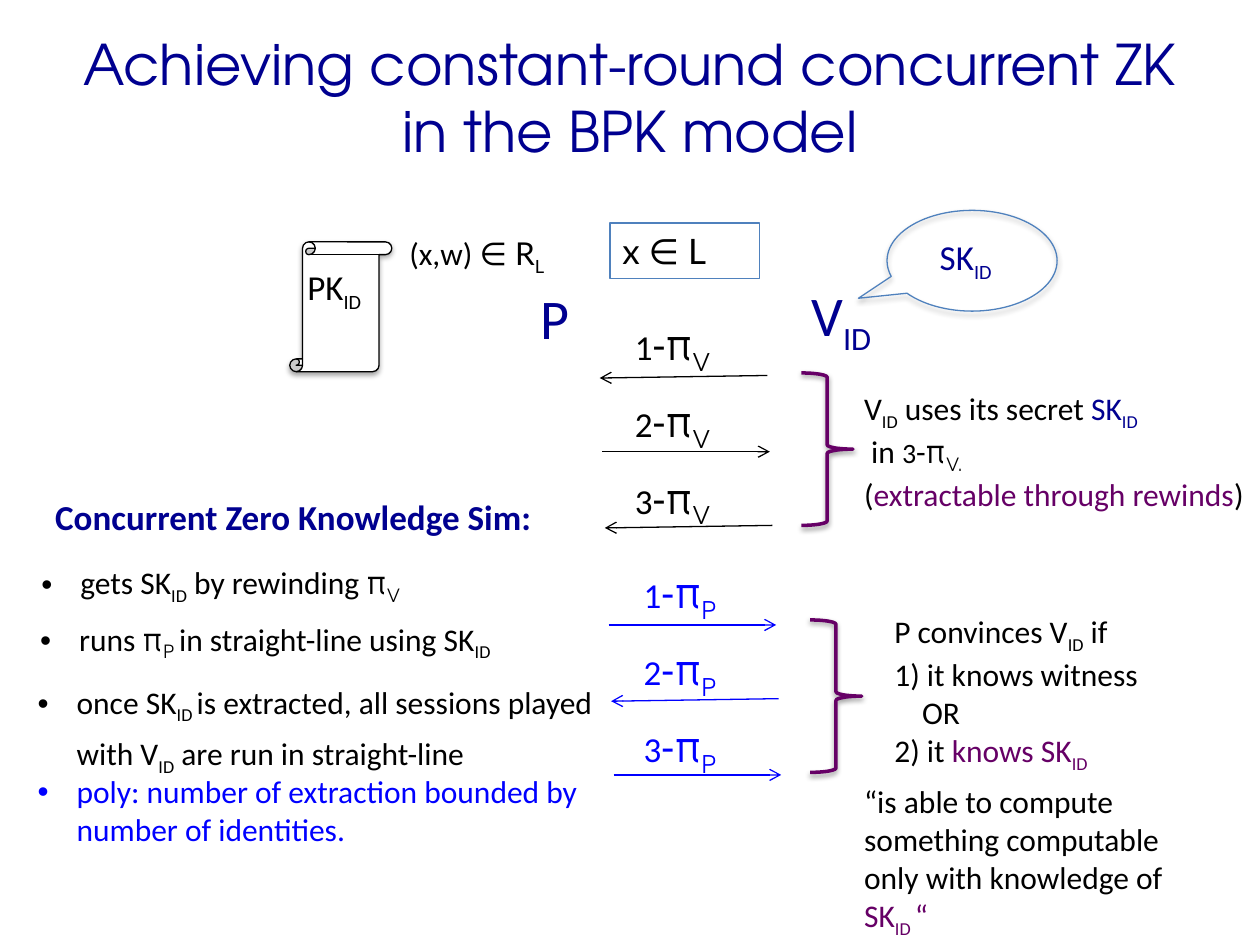
from dataclasses import dataclass

from lxml.etree import SubElement
from pptx import Presentation
from pptx.dml.color import RGBColor
from pptx.enum.shapes import MSO_CONNECTOR, MSO_SHAPE
from pptx.enum.text import MSO_ANCHOR, MSO_AUTO_SIZE, PP_ALIGN
from pptx.oxml.ns import qn
from pptx.util import Inches, Pt


@dataclass(frozen=True)
class Theme:
    black: str = "000000"
    white: str = "FFFFFF"
    navy: str = "000090"
    blue: str = "0000FF"
    purple: str = "660066"
    outline: str = "4F81BD"
    body: str = "Calibri"
    math: str = "TeX Gyre Adventor"
    symbol: str = "Lato"
    title: int = 32
    label: int = 20
    text: int = 18
    small: int = 16
    dash: int = 24
    thin: float = 0.75
    thick: float = 2


T = Theme()
NAVY = {"color": T.navy}
PURPLE = {"color": T.purple}
MATH = {"name": T.math}


def sub(text, **fmt):
    """A subscript run."""
    return text, {"sub": True, **fmt}


ID = sub("ID")


def write(tf, lines, **base):
    """Fill a text frame; a line is a list of strings and (text, format) runs."""
    for i, line in enumerate(lines):
        p = tf.paragraphs[0] if i == 0 else tf.add_paragraph()
        for run in line:
            text, own = (run, {}) if isinstance(run, str) else run
            fmt = {"name": T.body, "size": T.text, "color": T.black, **base, **own}
            r = p.add_run()
            r.text = text
            r.font.color.rgb = RGBColor.from_string(fmt.pop("color"))
            if fmt.pop("sub", False):
                r.font._element.set("baseline", "-25000")
            fmt["size"] = Pt(fmt["size"])
            for key, value in fmt.items():
                setattr(r.font, key, value)


def add_text(s, box, lines, wrap=True, **base):
    tf = s.shapes.add_textbox(*map(Inches, box)).text_frame
    tf.word_wrap = wrap
    tf.auto_size = MSO_AUTO_SIZE.SHAPE_TO_FIT_TEXT
    write(tf, lines, **base)
    return tf


def add_shadow(sp, alpha, distance):
    effects = sp._element.spPr.find(qn("a:effectLst"))
    shadow = SubElement(effects, qn("a:outerShdw"), blurRad=str(Pt(3.1)),
                        dist=str(Pt(distance)), dir="5400000", rotWithShape="0")
    color = SubElement(shadow, qn("a:srgbClr"), val=T.black)
    SubElement(color, qn("a:alpha"), val=str(alpha * 1000))


def add_outline(s, kind, box, color, width=T.thin, fill=None):
    sp = s.shapes.add_shape(kind, *map(Inches, box))
    sp.shadow.inherit = False
    if fill:
        sp.fill.solid()
        sp.fill.fore_color.rgb = RGBColor.from_string(fill)
    else:
        sp.fill.background()
    sp.line.color.rgb = RGBColor.from_string(color)
    sp.line.width = Pt(width)
    return sp


def add_arrow(s, start, end, color):
    c = s.shapes.add_connector(MSO_CONNECTOR.STRAIGHT, *map(Inches, start + end))
    c.line.color.rgb = RGBColor.from_string(color)
    c.line.width = Pt(T.thin)
    SubElement(c.line._get_or_add_ln(), qn("a:tailEnd"), type="arrow")
    SubElement(c._element.spPr, qn("a:effectLst"))


def add_title(s, box):
    tf = add_text(s, box, [["Achieving constant-round concurrent ZK in the BPK model"]],
                  name=T.math, size=T.title, color=T.navy)
    tf.auto_size = MSO_AUTO_SIZE.NONE
    tf.vertical_anchor = MSO_ANCHOR.MIDDLE
    tf.paragraphs[0].alignment = PP_ALIGN.CENTER


def add_parties(s, x, y):
    """Prover, verifier, statement and keys."""
    big = {"size": T.title, "color": T.navy}
    add_text(s, (x + 1.89, y + 0.53, 0.69, 0.64), [["P"]], **big)
    add_text(s, (x + 4.04, y + 0.51, 1.24, 0.64), [["V", ID]], **big)
    add_text(s, (x + 0.85, y + 0.14, 1.39, 0.4),
             [["(x,w) ", ("∈ R", {"name": T.symbol}), sub("L", name=T.symbol)]], wrap=False)

    statement = add_outline(s, MSO_SHAPE.RECTANGLE, (x + 2.54, y + 0.1, 1.19, 0.44), T.outline)
    write(statement.text_frame, [["x ∈ L"]], name=T.symbol, size=T.label)
    statement.text_frame.paragraphs[0].alignment = PP_ALIGN.LEFT

    add_text(s, (x + 5.06, y + 0.15, 0.71, 0.44), [["SK", ID]], size=T.label, color=T.navy)
    bubble = add_outline(s, MSO_SHAPE.OVAL_CALLOUT, (x + 4.74, y, 1.35, 0.8), T.outline)
    bubble.adjustments[0], bubble.adjustments[1] = -0.668, 0.372
    scroll = add_outline(s, MSO_SHAPE.VERTICAL_SCROLL, (x, y + 0.25, 0.81, 1.03),
                         T.black, fill=T.white)
    for sp in (bubble, scroll):
        add_shadow(sp, 35, 1.8)
    add_text(s, (x + 0.04, y + 0.39, 0.81, 0.44), [["PK", ID]], size=T.label)


def add_protocol(s, x, y, owner, directions, color):
    """Three numbered messages; a direction is '>' or '<'."""
    for i, direction in enumerate(directions):
        left, line_y = x + 0.02 * i, y + 0.51 + 0.595 * i
        right = left + 1.33
        if direction == ">":
            add_arrow(s, (left, line_y), (right, line_y), color)
        else:
            add_arrow(s, (right, line_y - 0.01), (left, line_y + 0.01), color)
        add_text(s, (x + 0.18, y + 0.61 * i, 0.86, 0.5),
                 [[(str(i + 1), {"size": T.label}), "-", ("π", MATH), sub(owner, **MATH)]],
                 wrap=False, size=T.dash, color=color)


def add_claim(s, x, y, note_box, lines):
    """A brace with its explanation; the note is placed relative to the brace."""
    brace = add_outline(s, MSO_SHAPE.RIGHT_BRACE, (x, y, 0.41, 1.21), T.purple, T.thick)
    add_shadow(brace, 38, 1.6)
    dx, dy, w, h = note_box
    return add_text(s, (x + dx, y + dy, w, h), lines)


def add_simulator(s, x, y):
    """Heading and bullets on the simulator."""
    add_text(s, (x + 0.14, y, 4.07, 0.44), [["Concurrent Zero Knowledge Sim:"]],
             size=T.label, bold=True, color=T.navy)
    bullets = [
        (0.03, 0.47, 3.16, 0.45, False, 1.2, T.black,
         ["gets SK", ID, " by rewinding ", ("π", MATH), sub("V", **MATH)]),
        (0.02, 0.92, 3.9, 0.45, False, 1.2, T.black,
         ["runs ", ("π", MATH), sub("P ", **MATH), "in straight-line using SK", ID]),
        (0, 1.42, 4.65, 0.82, True, 1.2, T.black,
         ["once SK", sub("ID "), "is extracted, all sessions played with V", ID,
          " are run in straight-line"]),
        (0, 2.2, 4.5, 0.71, True, 1.0, T.blue,
         ["poly: number of extraction bounded by number of identities."]),
    ]
    for dx, dy, w, h, wrap, spacing, color, line in bullets:
        tf = add_text(s, (x + dx, y + dy, w, h), [line], wrap=wrap, color=color)
        p = tf.paragraphs[0]
        p.line_spacing = spacing
        pPr = p._p.get_or_add_pPr()
        pPr.set("marL", str(Inches(0.31)))
        pPr.set("indent", str(-Inches(0.31)))
        SubElement(pPr, qn("a:buFont"), typeface="Arial")
        SubElement(pPr, qn("a:buChar"), char="•")


def main():
    prs = Presentation()
    prs.slide_width, prs.slide_height = Inches(10), Inches(7.5)
    s = prs.slides.add_slide(prs.slide_layouts[6])

    add_title(s, (0.5, 0.14, 9, 1.25))
    add_parties(s, 2.3, 1.67)

    # Verifier's proof
    add_protocol(s, 4.76, 2.48, "V", "<><", T.black)
    add_claim(s, 6.36, 2.96, (0.4, 0.08, 3.24, 1.31), [
        ["V", ID, " uses its secret ", ("SK", NAVY), sub("ID", **NAVY)],
        [" in ", ("3", {"size": T.small}), "-", ("π", MATH), sub("V.", **MATH)],
        ["(", ("extractable through rewinds", PURPLE), ")"],
    ])

    # Prover's proof
    add_protocol(s, 4.83, 4.45, "P", "><>", T.blue)
    tf = add_claim(s, 6.43, 4.92, (0.57, -0.11, 2.34, 1.31), [
        ["P convinces V", ID, " if"],
        ["1) it knows witness"],
        ["OR"],
        ["2) it ", ("knows SK", PURPLE), sub("ID", **PURPLE)],
    ])
    tf.paragraphs[2]._p.get_or_add_pPr().set("marL", str(Inches(0.22)))
    add_text(s, (6.76, 6.16, 2.74, 1.31), [
        ["“is able to compute something computable only with knowledge of ",
         ("SK", PURPLE), sub("ID ", **PURPLE), ("“", PURPLE)],
    ])

    add_simulator(s, 0.2, 3.88)
    prs.save("out.pptx")


if __name__ == "__main__":
    main()
